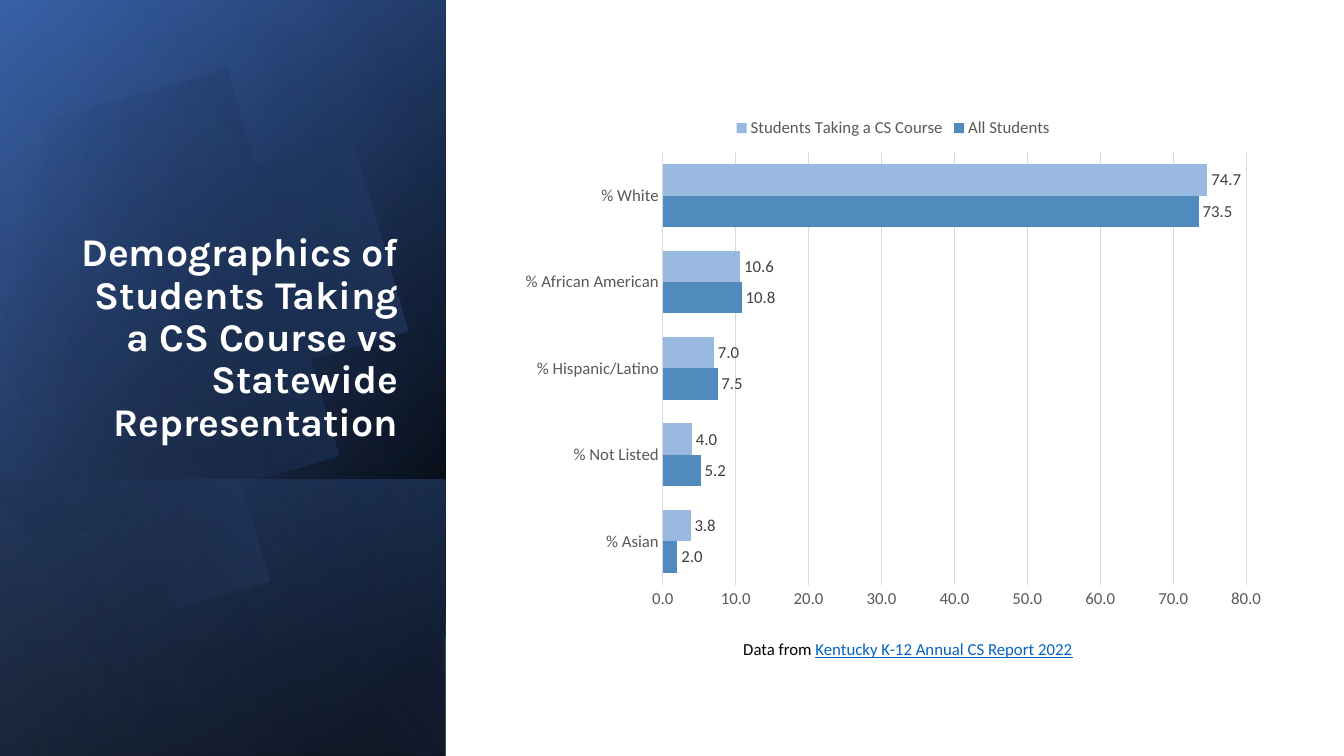
import math
from dataclasses import dataclass

import lxml.etree
import pptx
import pptx.chart.data
import pptx.dml.color
import pptx.enum.chart
import pptx.enum.shapes
import pptx.enum.text
import pptx.oxml.ns
import pptx.util

Inches = pptx.util.Inches


@dataclass(frozen=True)
class Theme:
    body_font: str = "Calibri"
    title_font: str = "Karla"
    title_size: int = 28
    text_size: int = 12
    white: str = "FFFFFF"
    black: str = "000000"
    navy: str = "2F5597"
    blue: str = "4472C4"
    pale_blue: str = "8FAADC"
    grid: str = "D9D9D9"
    axis_text: str = "595959"
    label_text: str = "404040"
    link: str = "0563C1"
    all_students: str = "518ABD"
    course_students: str = "98B8E0"


def rgb(color):
    return pptx.dml.color.RGBColor.from_string(color)


def add_node(parent, tag, **attributes):
    return lxml.etree.SubElement(parent, pptx.oxml.ns.qn(tag), **attributes)


def curve_points(start, curves, steps=24):
    points = [start]
    for first, second, end in curves:
        begin = points[-1]
        for step in range(1, steps + 1):
            t = step / steps
            weights = ((1 - t) ** 3, 3 * t * (1 - t) ** 2, 3 * t * t * (1 - t), t ** 3)
            corners = (begin, first, second, end)
            points.append(tuple(sum(w * corner[axis] for w, corner in zip(weights, corners))
                                for axis in (0, 1)))
    return points


def rotate(point, center, degrees):
    cos, sin = math.cos(math.radians(degrees)), math.sin(math.radians(degrees))
    x, y = point[0] - center[0], point[1] - center[1]
    return center[0] + x * cos - y * sin, center[1] + x * sin + y * cos


class SlideBuilder:
    def __init__(self, slide, theme):
        self.slide = slide
        self.theme = theme

    def style(self, font, color, size=None, name=None):
        font.name = name or self.theme.body_font
        font.size = pptx.util.Pt(size or self.theme.text_size)
        font.color.rgb = rgb(color)

    def gradient(self, shape, stops, angle):
        shape.shadow.inherit = False
        shape.line.fill.background()
        shape.fill.gradient()
        fill = shape._element.spPr.find(pptx.oxml.ns.qn("a:gradFill"))
        for child in list(fill):
            fill.remove(child)
        stop_list = add_node(fill, "a:gsLst")
        for position, color, opacity in stops:
            stop = add_node(stop_list, "a:gs", pos=str(position * 1000))
            node = add_node(stop, "a:srgbClr", val=color)
            if opacity < 100:
                add_node(node, "a:alpha", val=str(opacity * 1000))
        add_node(fill, "a:lin", ang=str(angle * 60000), scaled="0")

    def panel(self, left, top, width, height, stops, angle):
        shape = self.slide.shapes.add_shape(
            pptx.enum.shapes.MSO_SHAPE.RECTANGLE,
            Inches(left), Inches(top), Inches(width), Inches(height))
        shape.rotation = 90
        shape._element.spPr.find(pptx.oxml.ns.qn("a:xfrm")).set("flipH", "1")
        self.gradient(shape, stops, angle)

    def outline(self, points, center, rotation, stops, angle):
        flat = [rotate(point, center, -rotation) for point in points]
        builder = self.slide.shapes.build_freeform(*flat[0], scale=Inches(1))
        builder.add_line_segments(flat[1:], close=True)
        shape = builder.convert_to_shape()
        shape.rotation = rotation
        self.gradient(shape, stops, angle)

    def title(self, text, left, top, width, height):
        title = self.slide.shapes.title
        title.left, title.top = Inches(left), Inches(top)
        title.width, title.height = Inches(width), Inches(height)
        frame = title.text_frame
        frame.text = text
        frame.word_wrap = True
        frame.auto_size = pptx.enum.text.MSO_AUTO_SIZE.NONE
        frame.vertical_anchor = pptx.enum.text.MSO_ANCHOR.BOTTOM
        para = frame.paragraphs[0]
        para.alignment = pptx.enum.text.PP_ALIGN.RIGHT
        para.line_spacing = 0.9
        para.font.bold = True
        self.style(para.font, self.theme.white, self.theme.title_size, self.theme.title_font)
        tree = self.slide.shapes._spTree
        tree.remove(title._element)
        tree.append(title._element)

    def bar_chart(self, categories, series, left, top, width, height):
        theme = self.theme
        data = pptx.chart.data.CategoryChartData(number_format="0.0")
        data.categories = categories
        for name, values, color in series:
            data.add_series(name, values)
        chart = self.slide.shapes.add_chart(
            pptx.enum.chart.XL_CHART_TYPE.BAR_CLUSTERED,
            Inches(left), Inches(top), Inches(width), Inches(height), data).chart
        self.style(chart.font, theme.black, 10)
        chart.has_title = False
        chart.has_legend = True
        chart.legend.position = pptx.enum.chart.XL_LEGEND_POSITION.TOP
        chart.legend.include_in_layout = False
        self.style(chart.legend.font, theme.axis_text)
        for axis in (chart.category_axis, chart.value_axis):
            axis.major_tick_mark = axis.minor_tick_mark = pptx.enum.chart.XL_TICK_MARK.NONE
            self.style(axis.tick_labels.font, theme.axis_text)
        chart.value_axis.minimum_scale = 0
        chart.value_axis.maximum_scale = 80
        chart.value_axis.major_unit = 10
        chart.value_axis.tick_labels.number_format = "0.0"
        chart.value_axis.tick_labels.number_format_is_linked = False
        chart.value_axis.format.line.fill.background()
        for line in (chart.category_axis.format.line,
                     chart.value_axis.major_gridlines.format.line):
            line.color.rgb = rgb(theme.grid)
            line.width = pptx.util.Pt(0.75)
        plot = chart.plots[0]
        plot.gap_width = 75
        plot.overlap = 0
        plot.vary_by_categories = False
        for bars, (name, values, color) in zip(plot.series, series):
            bars.format.fill.solid()
            bars.format.fill.fore_color.rgb = rgb(color)
            labels = bars.data_labels
            labels.show_value = True
            labels.number_format = "0.0"
            labels.number_format_is_linked = False
            labels.position = pptx.enum.chart.XL_LABEL_POSITION.OUTSIDE_END
            self.style(labels.font, theme.label_text)

    def source_note(self, lead, source, left, top, width, height):
        box = self.slide.shapes.add_textbox(
            Inches(left), Inches(top), Inches(width), Inches(height))
        box.text_frame.word_wrap = True
        box.text_frame.auto_size = pptx.enum.text.MSO_AUTO_SIZE.SHAPE_TO_FIT_TEXT
        para = box.text_frame.paragraphs[0]
        para.alignment = pptx.enum.text.PP_ALIGN.CENTER
        for text, color in ((lead, self.theme.black), (source, self.theme.link)):
            span = para.add_run()
            span.text = text
            self.style(span.font, color)
        span.font.underline = True


def main():
    theme = Theme()
    deck = pptx.Presentation()
    deck.slide_width, deck.slide_height = Inches(13.33), Inches(7.5)
    page = SlideBuilder(deck.slides.add_slide(deck.slide_layouts[5]), theme)

    full_panel = (-1.54, 1.54, 7.5, 4.42)
    page.panel(*full_panel, [(8, theme.black, 100), (100, theme.navy, 100)], 50)
    page.panel(*full_panel, [(0, theme.black, 0), (99, theme.blue, 46)], 30)
    page.panel(0.84, 3.92, 2.74, 4.42, [(2, theme.blue, 29), (100, theme.black, 30)], 130)
    disc = curve_points((1.49, 1.1), [
        ((2.46, 1.12), (3.35, 1.77), (3.63, 2.75)),
        ((3.98, 3.97), (3.28, 5.23), (2.07, 5.58)),
        ((1.31, 5.8), (0.53, 5.61), (-0.03, 5.14))])
    disc += [(-0.15, 5.03), (-0.15, 1.75)]
    disc += curve_points((0, 1.61), [
        ((0.23, 1.42), (0.5, 1.28), (0.8, 1.19)),
        ((1.03, 1.13), (1.26, 1.1), (1.49, 1.1))])
    page.outline(disc, (1.58, 3.34), 343.9, [(29, theme.black, 0), (100, theme.blue, 43)], 30)
    page.panel(*full_panel, [(0, theme.black, 0), (99, theme.pale_blue, 11)], 120)

    page.title("Demographics of Students Taking a CS Course vs Statewide Representation",
               0.64, 1.84, 3.41, 2.62)
    page.bar_chart(
        ["% Asian", "% Not Listed", "% Hispanic/Latino", "% African American", "% White"],
        [("All Students", (2, 5.2, 7.5, 10.8, 73.5), theme.all_students),
         ("Students Taking a CS Course", (3.8, 4, 7, 10.6, 74.7), theme.course_students)],
        5.06, 1.06, 7.6, 5.08)
    page.source_note("Data from ", "Kentucky K-12 Annual CS Report 2022", 5.59, 6.29, 6.83, 0.3)
    deck.save("out.pptx")


if __name__ == "__main__":
    main()
